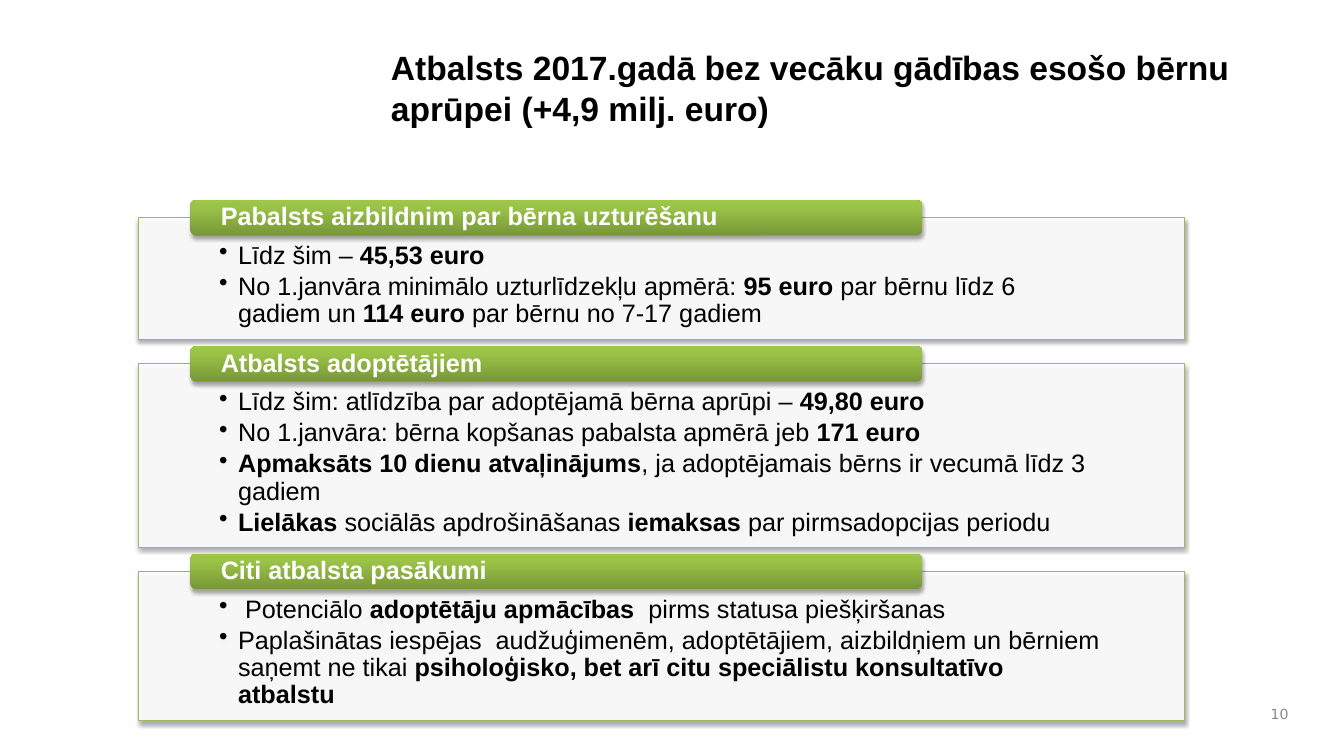
from lxml import etree
from pptx import Presentation
from pptx.dml.color import RGBColor
from pptx.enum import shapes, text
from pptx.oxml import parse_xml
from pptx.util import Pt

BLACK = RGBColor(0x00, 0x00, 0x00)
WHITE = RGBColor(0xFF, 0xFF, 0xFF)
GREEN = RGBColor(0x9B, 0xBB, 0x59)
GREY = RGBColor(0x89, 0x89, 0x89)

NS = 'xmlns:a="http://schemas.openxmlformats.org/drawingml/2006/main"'
SHADOW = f'''<a:effectLst {NS}><a:outerShdw blurRad="39370" dist="22860" dir="5400000"
  rotWithShape="0"><a:srgbClr val="000000"><a:alpha val="35000"/></a:srgbClr></a:outerShdw></a:effectLst>'''
SHADE = f'''<a:gradFill {NS} rotWithShape="1"><a:gsLst>
  <a:gs pos="0"><a:srgbClr val="779737"/></a:gs>
  <a:gs pos="80000"><a:srgbClr val="9BC348"/></a:gs>
  <a:gs pos="100000"><a:srgbClr val="9DC746"/></a:gs>
  </a:gsLst><a:lin ang="16200000" scaled="0"/></a:gradFill>'''

# Panels: heading, height, bullets; each bullet alternates (text, bold) runs
PANELS = [
    ("Pabalsts aizbildnim par bērna uzturēšanu", 87.1, [
        [("Līdz šim – ", False), ("45,53 euro", True)],
        [("No 1.janvāra minimālo uzturlīdzekļu apmērā: ", False), ("95 euro ", True),
         ("par bērnu līdz 6 gadiem un ", False), ("114 euro ", True),
         ("par bērnu no 7-17 gadiem", False)],
    ]),
    ("Atbalsts adoptētājiem", 131, [
        [("Līdz šim: atlīdzība par adoptējamā bērna aprūpi – ", False), ("49,80 euro", True)],
        [("No 1.janvāra: bērna kopšanas pabalsta apmērā jeb ", False), ("171 euro", True)],
        [("Apmaksāts 10 dienu atvaļinājums", True),
         (", ja adoptējamais bērns ir vecumā līdz 3 gadiem", False)],
        [("Lielākas ", True), ("sociālās apdrošināšanas ", False), ("iemaksas", True),
         (" par pirmsadopcijas periodu", False)],
    ]),
    ("Citi atbalsta pasākumi", 106.6, [
        [(" Potenciālo ", False), ("adoptētāju apmācības  ", True),
         ("pirms statusa piešķiršanas", False)],
        [("Paplašinātas iespējas  audžuģimenēm, adoptētājiem, aizbildņiem un bērniem "
          "saņemt ne tikai ", False),
         ("psiholoģisko, bet arī citu speciālistu konsultatīvo atbalstu", True)],
    ]),
]


def frame(shape, anchor, left, top, right, bottom):
    box = shape.text_frame
    look = {"word_wrap": True, "vertical_anchor": anchor,
            "margin_left": Pt(left), "margin_top": Pt(top),
            "margin_right": Pt(right), "margin_bottom": Pt(bottom)}
    for name, value in look.items():
        setattr(box, name, value)
    return box


def write(para, words, size, color, bold=False, face="Arial"):
    run = para.add_run()
    run.text = words
    for name, value in {"name": face, "size": Pt(size), "bold": bold}.items():
        setattr(run.font, name, value)
    run.font.color.rgb = color


deck = Presentation()
deck.slide_width, deck.slide_height = Pt(960), Pt(540)
slide = deck.slides.add_slide(deck.slide_layouts[6])
TOP, MID = text.MSO_ANCHOR.TOP, text.MSO_ANCHOR.MIDDLE

# Title
title = slide.shapes.add_textbox(Pt(272.2), Pt(30.2), Pt(640), Pt(81.4))
para = frame(title, TOP, 7.2, 3.6, 7.2, 3.6).paragraphs[0]
write(para, "Atbalsts 2017.gadā bez vecāku gādības esošo bērnu aprūpei (+4,9 milj. euro)",
      24, BLACK, True)

# Slide number
number = slide.shapes.add_textbox(Pt(895.7), Pt(498.2), Pt(31.7), Pt(23.8))
para = frame(number, MID, 7.2, 3.6, 7.2, 3.6).paragraphs[0]
para.alignment = text.PP_ALIGN.RIGHT
write(para, "10", 10, GREY, face="DejaVu Sans")

# Panels with their heading tabs
top, gap, rise = 155.5, 17.3, 12.75
for heading, height, bullets in PANELS:
    panel = slide.shapes.add_shape(shapes.MSO_SHAPE.RECTANGLE,
                                   Pt(98.6), Pt(top), Pt(747.4), Pt(height))
    panel.fill.solid()
    panel.fill.fore_color.rgb = WHITE
    tint = panel.fill._xPr.find(".//{*}srgbClr")
    etree.SubElement(tint, tint.tag.replace("srgbClr", "alpha"), val="90000")
    panel.line.color.rgb = GREEN
    panel.line.width = Pt(0.75)
    panel._element.spPr.append(parse_xml(SHADOW))

    # Bullets
    box = frame(panel, TOP, 58, 18, 58, 10)
    for i, runs in enumerate(bullets):
        para = box.add_paragraph() if i else box.paragraphs[0]
        para.alignment = text.PP_ALIGN.LEFT
        para.line_spacing = 0.9
        para.space_after = Pt(2.7)
        props = para._p.get_or_add_pPr()
        props.set("marL", str(Pt(13.5)))
        props.set("indent", str(Pt(-13.5)))
        props.append(parse_xml(f'<a:buChar {NS} char="•"/>'))
        for words, bold in runs:
            write(para, words, 18, BLACK, bold)

    # Heading tab
    tab = slide.shapes.add_shape(shapes.MSO_SHAPE.ROUNDED_RECTANGLE,
                                 Pt(136), Pt(top - rise), Pt(522.7), Pt(2 * rise))
    tab.line.fill.background()
    tab._element.spPr.insert(2, parse_xml(SHADE))
    tab._element.spPr.append(parse_xml(SHADOW))
    para = frame(tab, MID, 20.5, 0, 20.5, 0).paragraphs[0]
    para.alignment = text.PP_ALIGN.LEFT
    para.line_spacing = 0.9
    write(para, heading, 18, WHITE, True)

    top += height + gap

deck.save("out.pptx")
